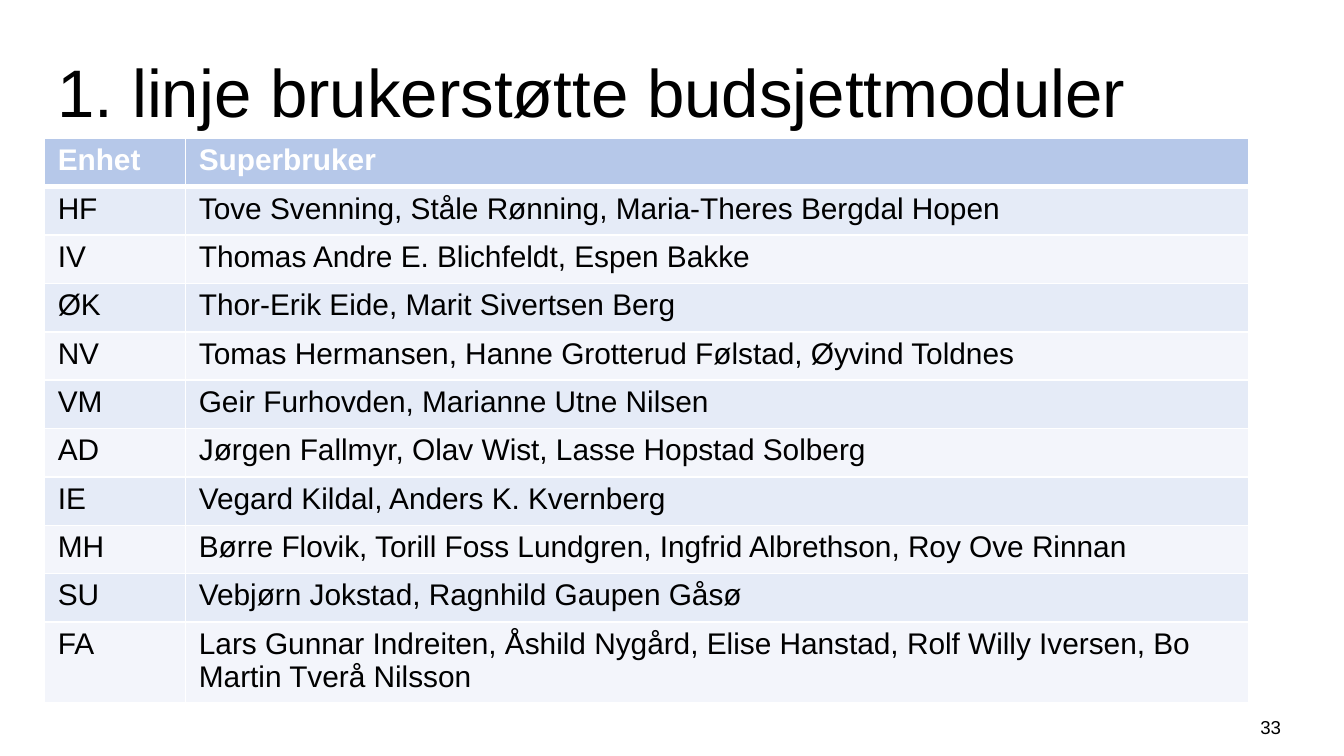
from lxml import etree
from pptx import Presentation
from pptx.dml.color import RGBColor
from pptx.enum import text
from pptx.oxml import ns
from pptx.util import Inches, Pt

# Content
TITLE = "1. linje brukerstøtte budsjettmoduler"
PAGE_NUMBER = "33"
HEADER = ("Enhet", "Superbruker")
SUPERUSERS = [
    ("HF", "Tove Svenning, Ståle Rønning, Maria-Theres Bergdal Hopen"),
    ("IV", "Thomas Andre E. Blichfeldt, Espen Bakke"),
    ("ØK", "Thor-Erik Eide, Marit Sivertsen Berg"),
    ("NV", "Tomas Hermansen, Hanne Grotterud Følstad, Øyvind Toldnes"),
    ("VM", "Geir Furhovden, Marianne Utne Nilsen"),
    ("AD", "Jørgen Fallmyr, Olav Wist, Lasse Hopstad Solberg"),
    ("IE", "Vegard Kildal, Anders K. Kvernberg"),
    ("MH", "Børre Flovik, Torill Foss Lundgren, Ingfrid Albrethson, Roy Ove Rinnan"),
    ("SU", "Vebjørn Jokstad, Ragnhild Gaupen Gåsø"),
    ("FA", "Lars Gunnar Indreiten, Åshild Nygård, Elise Hanstad, "
           "Rolf Willy Iversen, Bo Martin Tverå Nilsson"),
]

# Style
FONT = "Arial"
COLORS = {"text": "000000", "white": "FFFFFF", "header": "B6C8E9",
          "odd": "E5EBF7", "even": "F3F5FB"}
SLIDE_WIDTH = 10
COLUMN_WIDTHS = (1.05, 7.91)
ROW_HEIGHT, LAST_ROW_HEIGHT = 0.36, 0.56


def write(frame, words, size, color="text", bold=False, align=None):
    paragraph = frame.paragraphs[0]
    paragraph.alignment = align
    run = paragraph.add_run()
    run.text = words
    run.font.name = FONT
    run.font.size = Pt(size)
    run.font.bold = bold
    run.font.color.rgb = RGBColor.from_string(COLORS[color])


def add_text(slide, box, words, size, align):
    frame = slide.shapes.add_textbox(*map(Inches, box)).text_frame
    frame.word_wrap = True
    frame.vertical_anchor = text.MSO_ANCHOR.MIDDLE
    write(frame, words, size, align=align)


def set_borders(cell, widths):
    """Draw white cell borders; they must come before the fill in the XML."""
    properties = cell._tc.get_or_add_tcPr()
    for position, (side, width) in enumerate(widths.items()):
        line = etree.Element(ns.qn(f"a:ln{side}"), w=str(Pt(width)))
        fill = etree.SubElement(line, ns.qn("a:solidFill"))
        etree.SubElement(fill, ns.qn("a:srgbClr"), val=COLORS["white"])
        properties.insert(position, line)


def add_superuser_table(slide):
    rows = [HEADER, *SUPERUSERS]
    heights = [ROW_HEIGHT] * (len(rows) - 1) + [LAST_ROW_HEIGHT]
    table = slide.shapes.add_table(
        len(rows), len(HEADER), Inches(0.33), Inches(1.03),
        Inches(sum(COLUMN_WIDTHS)), Inches(sum(heights))).table
    for column, width in zip(table.columns, COLUMN_WIDTHS):
        column.width = Inches(width)

    for r, (words, height) in enumerate(zip(rows, heights)):
        table.rows[r].height = Inches(height)
        is_header = r == 0
        band = "header" if is_header else "odd" if r % 2 else "even"
        for c, entry in enumerate(words):
            cell = table.cell(r, c)
            cell.margin_top, cell.margin_bottom = Inches(0.04), Inches(0.03)
            cell.fill.solid()
            cell.fill.fore_color.rgb = RGBColor.from_string(COLORS[band])
            set_borders(cell, {"L": 1, "R": 1, "T": 3 if r == 1 else 1,
                               "B": 3 if is_header else 1})
            write(cell.text_frame, entry, 16,
                  "white" if is_header else "text", is_header)


def main():
    deck = Presentation()
    deck.slide_width = Inches(SLIDE_WIDTH)
    deck.slide_height = Inches(SLIDE_WIDTH * 9 / 16)
    slide = deck.slides.add_slide(deck.slide_layouts[6])

    # Page number, title and table
    add_text(slide, (9.27, 5.26, 0.37, 0.3), PAGE_NUMBER, 10, text.PP_ALIGN.CENTER)
    add_text(slide, (0.33, 0.32, 9.21, 0.71), TITLE, 36, text.PP_ALIGN.LEFT)
    add_superuser_table(slide)

    deck.save("out.pptx")


if __name__ == "__main__":
    main()
